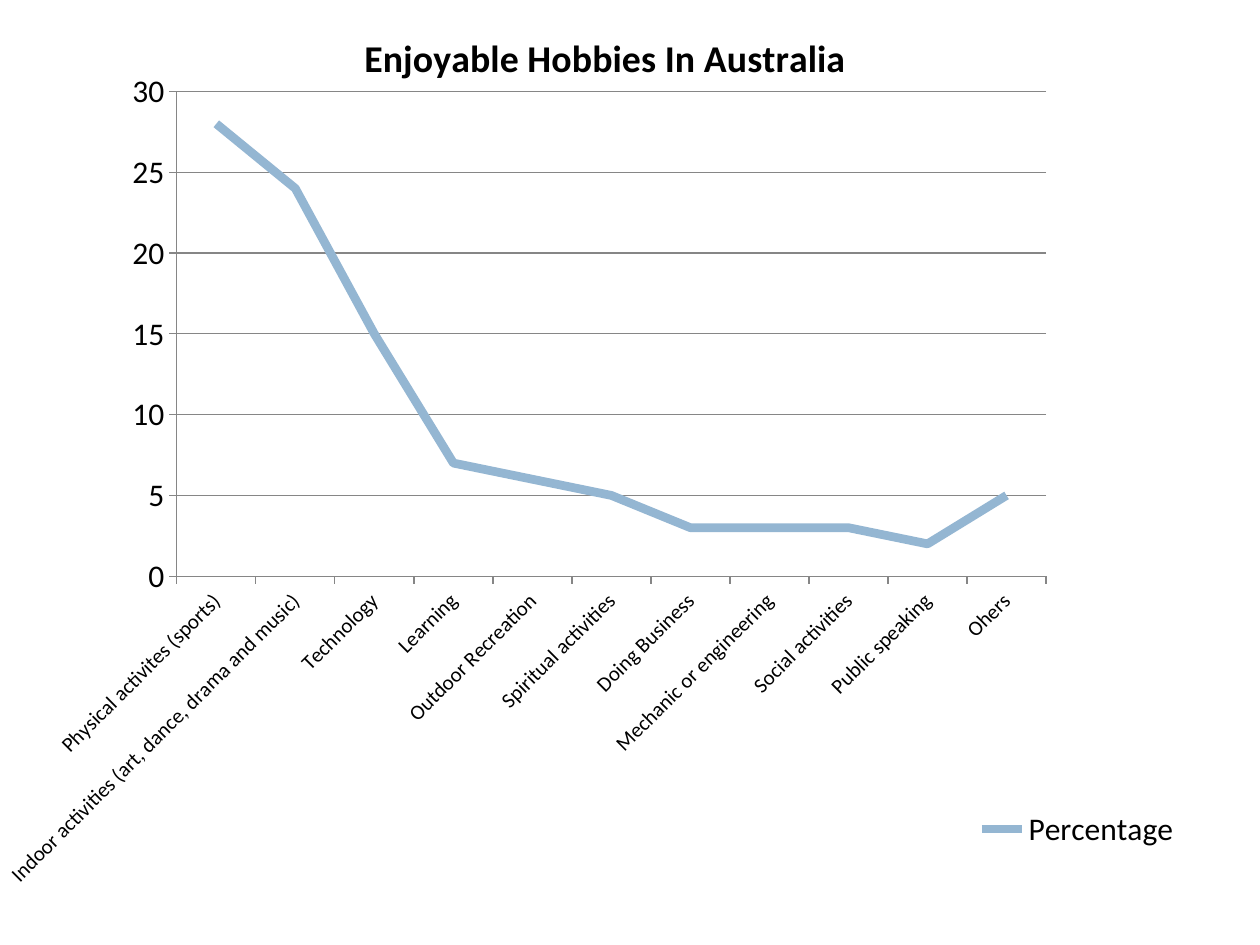
from lxml import etree
from pptx import Presentation
from pptx import util as u
from pptx.chart.data import CategoryChartData
from pptx.dml.color import RGBColor
from pptx.enum import chart as ch
from pptx.oxml.ns import qn

COLORS = {"text": "000000", "line": "94B6D2", "axis": "868686"}
FONT = "Calibri"
HOBBIES = {
    "Physical activites (sports)": 28,
    "Indoor activities (art, dance, drama and music)": 24,
    "Technology": 15,
    "Learning": 7,
    "Outdoor Recreation": 6,
    "Spiritual activities": 5,
    "Doing Business": 3,
    "Mechanic or engineering": 3,
    "Social activities": 3,
    "Public speaking": 2,
    "Ohers": 5,
}


def set_font(font, size, bold=False):
    values = {"name": FONT, "size": u.Pt(size), "bold": bold}
    for name, value in values.items():
        setattr(font, name, value)
    font.color.rgb = RGBColor.from_string(COLORS["text"])


def place(parent, index, values):
    for old in parent.findall(qn("c:layout")):
        parent.remove(old)
    layout = etree.Element(qn("c:layout"))
    manual = etree.SubElement(layout, qn("c:manualLayout"))
    for tag, value in values.items():
        etree.SubElement(manual, qn(f"c:{tag}")).set("val", str(value))
    parent.insert(index, layout)


prs = Presentation()
prs.slide_width, prs.slide_height = u.Inches(10), u.Inches(7.5)
s = prs.slides.add_slide(prs.slide_layouts[6])

data = CategoryChartData()
data.categories = list(HOBBIES)
data.add_series("Percentage", list(HOBBIES.values()))
chart = s.shapes.add_chart(
    ch.XL_CHART_TYPE.LINE, 0, 0,
    int(prs.slide_width * 0.961), int(prs.slide_height * 0.959), data,
).chart
set_font(chart.font, 18)

chart.has_title = True
tf = chart.chart_title.text_frame
tf.text = "Enjoyable Hobbies In Australia"
set_font(tf.paragraphs[0].runs[0].font, 21.6, True)
chart.chart_title.include_in_layout = False

plot = chart.plots[0]
plot.vary_by_categories = False
series = plot.series[0]
series.smooth = False
series.marker.style = ch.XL_MARKER_STYLE.NONE
series.format.line.width = u.Pt(5)
series.format.line.color.rgb = RGBColor.from_string(COLORS["line"])

cat, val = chart.category_axis, chart.value_axis
val.minimum_scale, val.maximum_scale, val.major_unit = 0, 30, 5
val.has_major_gridlines = True
for axis, size in ((cat, 12), (val, 18)):
    axis.major_tick_mark = ch.XL_TICK_MARK.OUTSIDE
    set_font(axis.tick_labels.font, size)
for item in (cat, val, val.major_gridlines):
    item.format.line.width = u.Pt(0.75)
    item.format.line.color.rgb = RGBColor.from_string(COLORS["axis"])
cat._element.find(qn("c:txPr")).find(qn("a:bodyPr")).set("rot", "-2700000")

chart.has_legend = True
legend = chart.legend
legend.position = ch.XL_LEGEND_POSITION.RIGHT
legend.include_in_layout = False
set_font(legend.font, 18)

edges = {"xMode": "edge", "yMode": "edge"}
place(chart._chartSpace.chart.plotArea, 0,
      {"layoutTarget": "inner", **edges, "x": 0.146, "y": 0.101, "w": 0.718, "h": 0.535})
place(legend._element, 1, {**edges, "x": 0.8, "y": 0.88, "w": 0.18, "h": 0.07})

prs.save("out.pptx")
